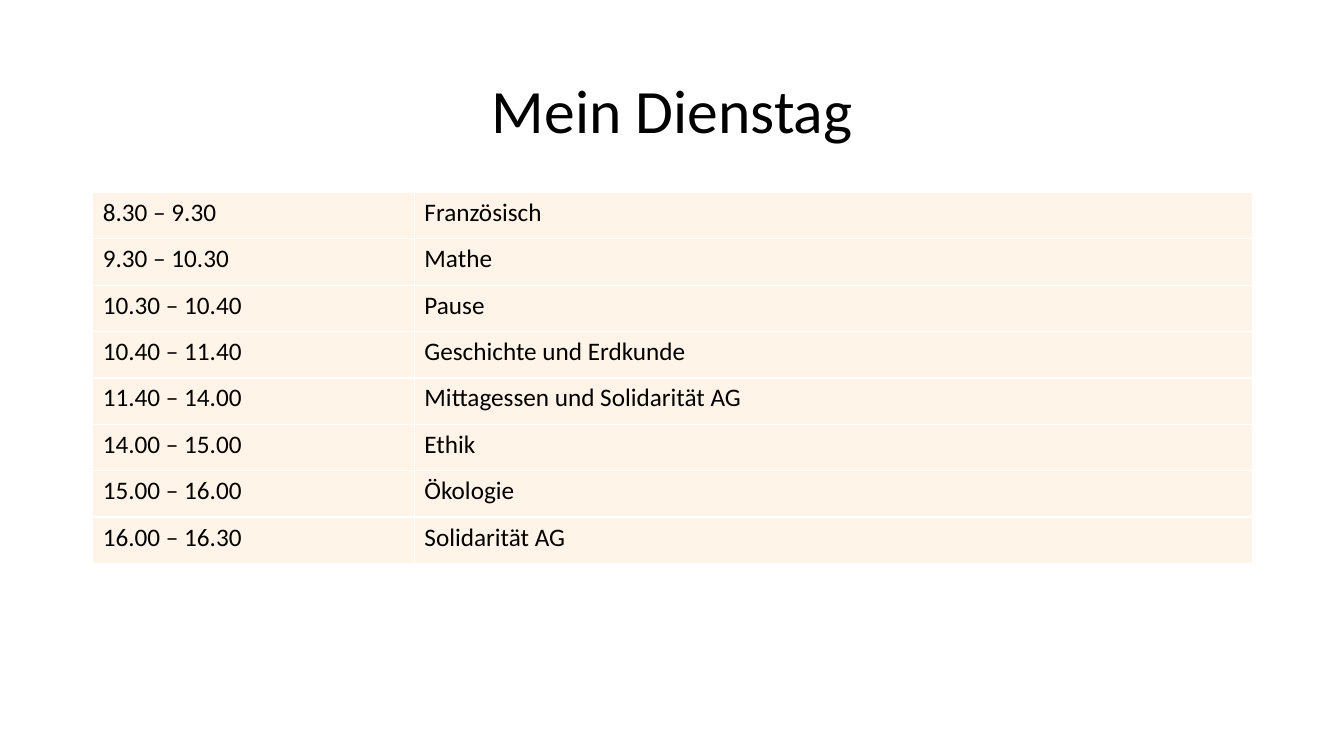
from lxml.etree import SubElement
from pptx import Presentation
from pptx.dml.color import RGBColor
from pptx.enum.text import MSO_ANCHOR, PP_ALIGN
from pptx.oxml.ns import qn
from pptx.util import Pt

TITLE = "Mein Dienstag"
LESSONS = [
    ("8.30 – 9.30", "Französisch"),
    ("9.30 – 10.30", "Mathe"),
    ("10.30 – 10.40", "Pause"),
    ("10.40 – 11.40", "Geschichte und Erdkunde"),
    ("11.40 – 14.00", "Mittagessen und Solidarität AG"),
    ("14.00 – 15.00", "Ethik"),
    ("15.00 – 16.00", "Ökologie"),
    ("16.00 – 16.30", "Solidarität AG"),
]
FONT, INK, CREAM, WHITE = "Calibri", "000000", "FFF4E7", "FFFFFF"
SLIDE_SIZE = (1333, 750)
LEFT, TITLE_TOP, TITLE_HEIGHT, TABLE_TOP = 92, 40, 145, 191
COLUMN_WIDTHS = (319, 831)
ROW_HEIGHT = 46


def px(length):
    return length * 9144


def color(hex_string):
    return RGBColor.from_string(hex_string)


def style(paragraph, size):
    paragraph.font.name = FONT
    paragraph.font.size = Pt(size)
    paragraph.font.color.rgb = color(INK)


def add_borders(cell):
    properties = cell._tc.get_or_add_tcPr()
    for side in ("lnL", "lnR", "lnT", "lnB"):
        border = SubElement(properties, qn(f"a:{side}"), w=str(Pt(1)))
        border_fill = SubElement(border, qn("a:solidFill"))
        SubElement(border_fill, qn("a:srgbClr"), val=WHITE)


def add_title(slide):
    box = slide.shapes.add_textbox(
        px(LEFT), px(TITLE_TOP), px(sum(COLUMN_WIDTHS)), px(TITLE_HEIGHT))
    heading = box.text_frame
    heading.word_wrap = True
    heading.vertical_anchor = MSO_ANCHOR.MIDDLE
    heading.text = TITLE
    line = heading.paragraphs[0]
    line.alignment = PP_ALIGN.CENTER
    line.line_spacing = 0.9
    style(line, 44)


def add_timetable(slide):
    timetable = slide.shapes.add_table(
        len(LESSONS), len(COLUMN_WIDTHS), px(LEFT), px(TABLE_TOP),
        px(sum(COLUMN_WIDTHS)), px(ROW_HEIGHT * len(LESSONS))).table
    timetable.first_row = False
    timetable.horz_banding = False
    for column, width in zip(timetable.columns, COLUMN_WIDTHS):
        column.width = px(width)
    for row, lesson in zip(timetable.rows, LESSONS):
        row.height = px(ROW_HEIGHT)
        for cell, entry in zip(row.cells, lesson):
            cell.text = entry
            style(cell.text_frame.paragraphs[0], 18)
            add_borders(cell)
            cell.fill.solid()
            cell.fill.fore_color.rgb = color(CREAM)


def main():
    deck = Presentation()
    deck.slide_width, deck.slide_height = map(px, SLIDE_SIZE)
    slide = deck.slides.add_slide(deck.slide_layouts[6])
    add_title(slide)
    add_timetable(slide)
    deck.save("out.pptx")


if __name__ == "__main__":
    main()
